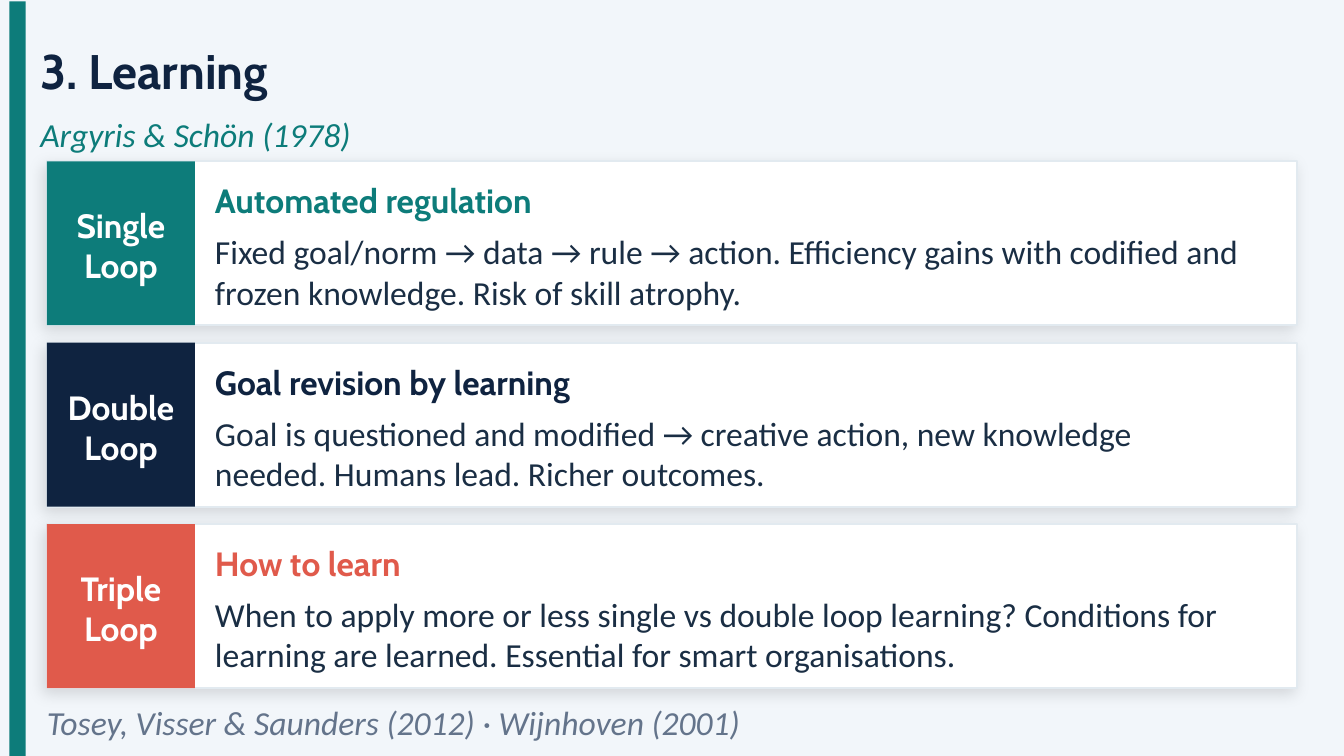
from lxml import etree
from pptx import Presentation
from pptx.dml.color import RGBColor
from pptx.enum import shapes, text
from pptx.oxml.ns import qn
from pptx.util import Inches, Pt

COLORS = {
    "background": "F2F6FA", "teal": "0D7C7A", "navy": "0F2340", "coral": "E05A4B",
    "white": "FFFFFF", "border": "E2EAF0", "body": "1A2E44", "muted": "64748B",
    "shadow": "000000",
}
HEADING_FONT, BODY_FONT = "Cabin", "Calibri"

TITLE = "3. Learning"
SUBTITLE = "Argyris & Schön (1978)"
SOURCES = "Tosey, Visser & Saunders (2012) · Wijnhoven (2001)"
LOOPS = [
    ("Single Loop", "teal", "Automated regulation",
     "Fixed goal/norm → data → rule → action. Efficiency gains with codified "
     "and frozen knowledge. Risk of skill atrophy."),
    ("Double Loop", "navy", "Goal revision by learning",
     "Goal is questioned and modified → creative action, new knowledge needed. "
     "Humans lead. Richer outcomes."),
    ("Triple Loop", "coral", "How to learn",
     "When to apply more or less single vs double loop learning? Conditions for "
     "learning are learned. Essential for smart organisations."),
]

SLIDE_WIDTH = 10
SLIDE_HEIGHT = SLIDE_WIDTH * 9 / 16
CARD_LEFT, CARD_TOP, CARD_WIDTH, CARD_HEIGHT = 0.35, 1.2, 9.3, 1.22
CARD_PITCH = 1.35
LABEL_WIDTH = 1.1
TEXT_LEFT, TEXT_WIDTH = 1.6, 7.7


def rgb(name):
    return RGBColor.from_string(COLORS[name])


def add_box(container, left, top, width, height, fill, border=None):
    shape = container.add_shape(shapes.MSO_SHAPE.RECTANGLE, Inches(left),
                                Inches(top), Inches(width), Inches(height))
    shape.shadow.inherit = False
    shape.fill.solid()
    shape.fill.fore_color.rgb = rgb(fill)
    if border:
        shape.line.color.rgb = rgb(border)
        shape.line.width = Pt(1)
    else:
        shape.line.fill.background()
    return shape


def add_soft_shadow(shape):
    effects = shape._element.spPr.find(qn("a:effectLst"))
    shadow = etree.SubElement(effects, qn("a:outerShdw"), blurRad=str(Pt(8)),
                              dist=str(Pt(3)), dir=str(135 * 60000),
                              algn="bl", rotWithShape="0")
    color = etree.SubElement(shadow, qn("a:srgbClr"), val=COLORS["shadow"])
    etree.SubElement(color, qn("a:alpha"), val="12000")


def add_text(container, words, left, top, width, height, color, font=BODY_FONT,
             size=18, bold=False, italic=False, align=text.PP_ALIGN.LEFT):
    box = container.add_textbox(Inches(left), Inches(top), Inches(width), Inches(height))
    frame = box.text_frame
    frame.word_wrap = True
    frame.vertical_anchor = text.MSO_ANCHOR.MIDDLE
    frame.margin_left = frame.margin_right = frame.margin_top = frame.margin_bottom = 0
    paragraph = frame.paragraphs[0]
    paragraph.text = words
    paragraph.alignment = align
    paragraph.font.name = font
    paragraph.font.size = Pt(size)
    paragraph.font.bold = bold
    paragraph.font.italic = italic
    paragraph.font.color.rgb = rgb(color)


def add_loop_card(slide, top, label, color, heading, description):
    card = slide.shapes.add_group_shape().shapes
    panel = add_box(card, CARD_LEFT, top, CARD_WIDTH, CARD_HEIGHT, "white", "border")
    add_soft_shadow(panel)
    add_box(card, CARD_LEFT, top, LABEL_WIDTH, CARD_HEIGHT, color)
    add_text(card, label, CARD_LEFT + 0.05, top + 0.2, LABEL_WIDTH - 0.1, 0.85,
             "white", HEADING_FONT, bold=True, align=text.PP_ALIGN.CENTER)
    add_text(card, heading, TEXT_LEFT, top + 0.1, TEXT_WIDTH, 0.38,
             color, HEADING_FONT, bold=True)
    add_text(card, description, TEXT_LEFT, top + 0.5, TEXT_WIDTH, 0.64, "body")


def main():
    presentation = Presentation()
    presentation.slide_width = Inches(SLIDE_WIDTH)
    presentation.slide_height = Inches(SLIDE_HEIGHT)
    slide = presentation.slides.add_slide(presentation.slide_layouts[6])
    slide.background.fill.solid()
    slide.background.fill.fore_color.rgb = rgb("background")

    add_box(slide.shapes, 0.07, 0.01, 0.12, SLIDE_HEIGHT, "teal")
    add_text(slide.shapes, TITLE, 0.3, 0.22, 9.4, 0.6, "navy", HEADING_FONT,
             size=26, bold=True)
    add_text(slide.shapes, SUBTITLE, 0.3, 0.82, 9.4, 0.35, "teal", italic=True)
    for index, loop in enumerate(LOOPS):
        add_loop_card(slide, CARD_TOP + index * CARD_PITCH, *loop)
    add_text(slide.shapes, SOURCES, CARD_LEFT, 5.25, CARD_WIDTH, 0.25, "muted",
             italic=True)

    presentation.save("out.pptx")


if __name__ == "__main__":
    main()
